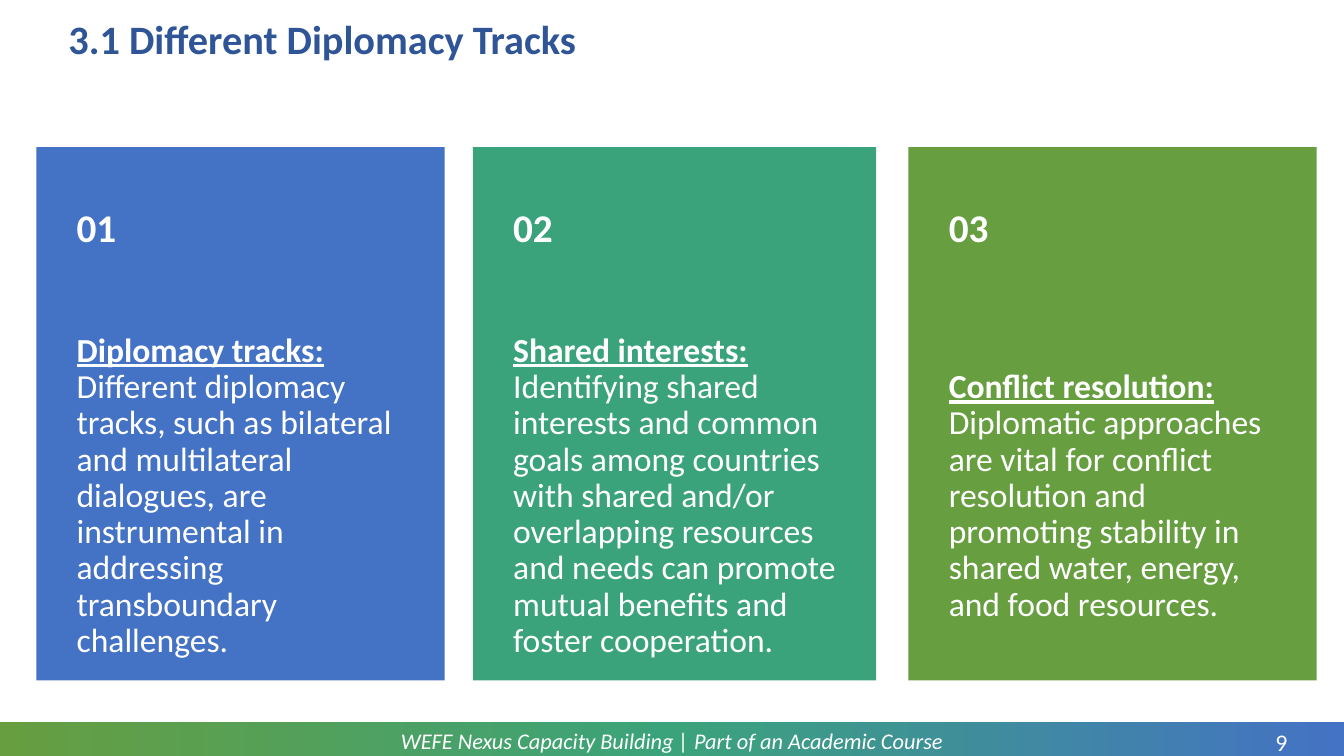
from copy import deepcopy

from pptx import Presentation
from pptx.dml.color import RGBColor
from pptx.enum.shapes import MSO_SHAPE as Shape
from pptx.enum.text import MSO_ANCHOR as Anchor, PP_ALIGN as Align
from pptx.oxml.ns import qn
from pptx.util import Inches, Pt

COLORS = {
    "blue": "4472C4",
    "teal": "3BA37B",
    "green": "669E40",
    "title": "2F5597",
    "white": "FFFFFF",
}
TRACKS = [
    (0.36, 4.05, "blue", "Diplomacy tracks: ",
     "Different diplomacy tracks, such as bilateral and multilateral dialogues, "
     "are instrumental in addressing transboundary challenges."),
    (4.69, 4, "teal", "Shared interests: ",
     "Identifying shared interests and common goals among countries with shared "
     "and/or overlapping resources and needs can promote mutual benefits and "
     "foster cooperation."),
    (9.01, 4.05, "green", "Conflict resolution: ",
     "Diplomatic approaches are vital for conflict resolution and promoting "
     "stability in shared water, energy, and food resources."),
]


def rgb(name):
    return RGBColor.from_string(COLORS[name])


def write(holder, text, size, color="white", bold=False, italic=False,
          underline=False, align=Align.LEFT, spacing=None,
          insets=(0.1, 0.05, 0.1, 0.05)):
    """Append a run to the holder's paragraph; insets are left, top, right, bottom."""
    frame = holder.text_frame
    frame.word_wrap = True
    frame.vertical_anchor = Anchor.MIDDLE
    (frame.margin_left, frame.margin_top,
     frame.margin_right, frame.margin_bottom) = map(Inches, insets)
    paragraph = frame.paragraphs[0]
    paragraph.alignment = align
    paragraph.line_spacing = spacing
    run = paragraph.add_run()
    run.text = text
    font = run.font
    font.name, font.size = "Calibri", Pt(size)
    font.bold, font.italic, font.underline = bold, italic, underline
    font.color.rgb = rgb(color)


prs = Presentation()
prs.slide_width, prs.slide_height = Inches(13.33), Inches(7.5)
shapes = prs.slides.add_slide(prs.slide_layouts[6]).shapes

# Footer band with a three-stop gradient
band = shapes.add_shape(Shape.RECTANGLE, 0, Inches(7.16), Inches(13.33), Inches(0.38))
band.shadow.inherit = False
band.line.fill.background()
band.fill.gradient()
band.fill.gradient_angle = 0
first_stop = band._element.spPr.find(qn("a:gradFill")).find(qn("a:gsLst"))[0]
first_stop.addnext(deepcopy(first_stop))
for stop, position, color in zip(band.fill.gradient_stops, (0, 0.5, 1),
                                 ("green", "teal", "blue")):
    stop.position = position
    stop.color.rgb = rgb(color)

course = shapes.add_textbox(Inches(0.92), Inches(7.17), Inches(11.49), Inches(0.36))
write(course, "WEFE Nexus Capacity Building | Part of an Academic Course", 16,
      italic=True, align=Align.CENTER)
page = shapes.add_textbox(Inches(12.41), Inches(7.22), Inches(0.6), Inches(0.29))
write(page, "9", 17, align=Align.CENTER, insets=(0, 0, 0, 0))

title = shapes.add_textbox(Inches(0.58), Inches(0.13), Inches(12.15), Inches(0.56))
write(title, "3.1 Different Diplomacy Tracks", 28.8, color="title", bold=True, spacing=0.9)

# One card per track, with its number on top
for number, (left, width, color, heading, body) in enumerate(TRACKS, 1):
    card = shapes.add_shape(Shape.RECTANGLE, Inches(left), Inches(1.46),
                            Inches(width), Inches(5.29))
    card.shadow.inherit = False
    card.line.fill.background()
    card.fill.solid()
    card.fill.fore_color.rgb = rgb(color)
    card_format = {"spacing": 0.9, "insets": (0.4, 2, 0.4, 0.36)}
    write(card, heading, 24, bold=True, underline=True, **card_format)
    write(card, body, 24, **card_format)

    label = shapes.add_textbox(Inches(left), Inches(1.53), Inches(width), Inches(1.5))
    write(label, f"{number:02}", 28, bold=True, spacing=0.9, insets=(0.4, 0.18, 0.4, 0.18))

prs.save("out.pptx")
